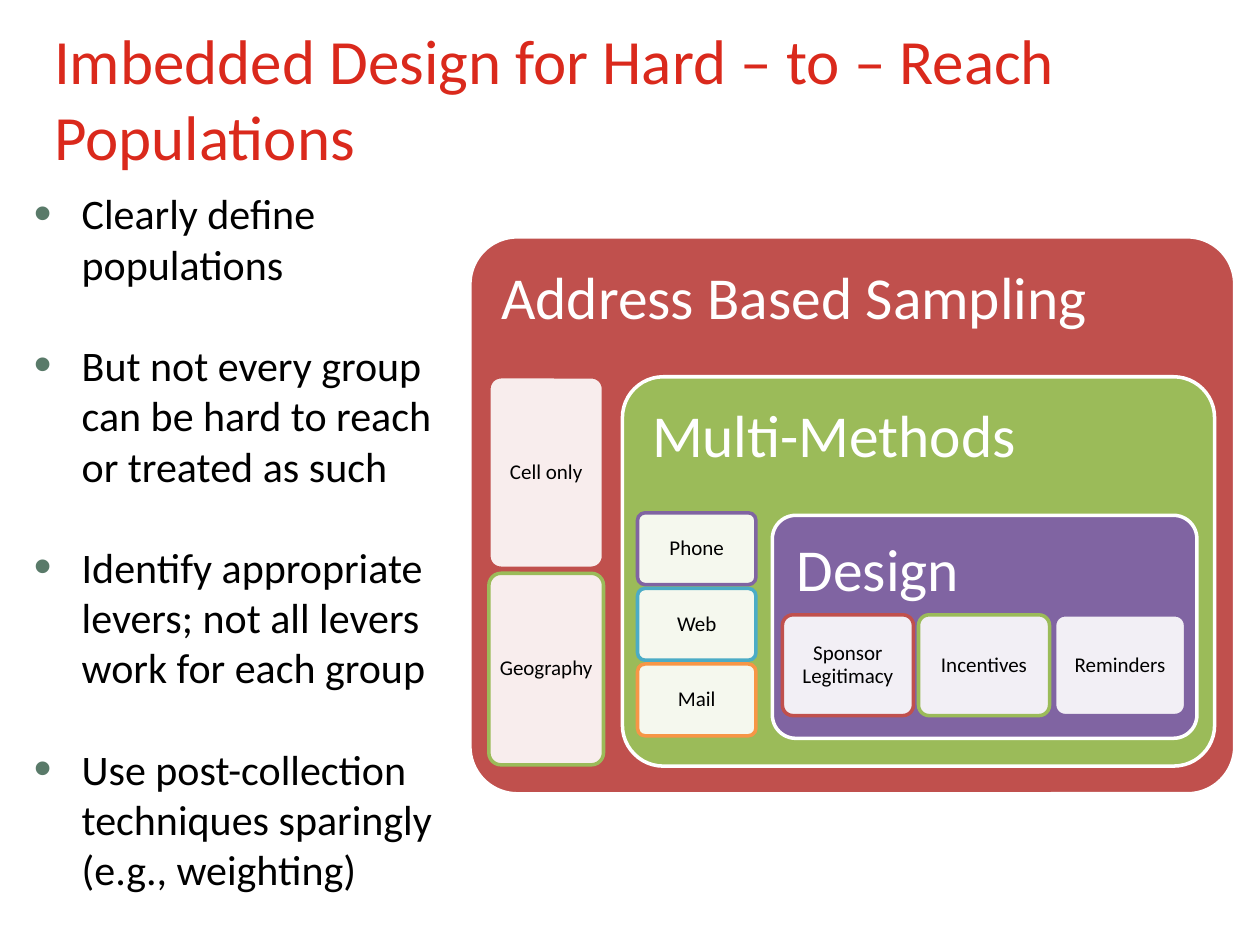
from lxml import etree
from pptx import Presentation
from pptx import util as u
from pptx.dml.color import RGBColor
from pptx.enum import shapes, text
from pptx.oxml.ns import qn

Inches = u.Inches
FONT = "Calibri"
RED, GREEN, PURPLE = "C0504D", "9BBB59", "8064A2"
TEAL, ORANGE = "4BACC6", "F79646"
WHITE, BLACK = "FFFFFF", "000000"

POINTS = [
    "Clearly define populations",
    "But not every group can be hard to reach or treated as such",
    "Identify appropriate levers; not all levers work for each group",
    "Use post-collection techniques sparingly (e.g., weighting)",
]


def rgb(value):
    return RGBColor.from_string(value)


def add_run(paragraph, words, size, color):
    run = paragraph.add_run()
    run.text = words
    run.font.name = FONT
    run.font.size = u.Pt(size)
    run.font.color.rgb = rgb(color)


def set_bullet(paragraph, color):
    props = paragraph._p.get_or_add_pPr()
    props.set("marL", str(Inches(0.38)))
    props.set("indent", str(-Inches(0.38)))
    bullet_color = etree.SubElement(props, qn("a:buClr"))
    etree.SubElement(bullet_color, qn("a:srgbClr"), val=color)
    etree.SubElement(props, qn("a:buSzPct"), val="120000")
    etree.SubElement(props, qn("a:buFont"), typeface="Arial")
    etree.SubElement(props, qn("a:buChar"), char="•")


def add_title(slide, left, top, width, height):
    title = slide.shapes.title
    title.left, title.top = Inches(left), Inches(top)
    title.width, title.height = Inches(width), Inches(height)
    frame = title.text_frame
    frame.auto_size = text.MSO_AUTO_SIZE.NONE
    frame.vertical_anchor = text.MSO_ANCHOR.MIDDLE
    heading = frame.paragraphs[0]
    heading.alignment = text.PP_ALIGN.LEFT
    add_run(heading, "Imbedded Design for Hard – to – Reach Populations", 36, "DA291C")


def add_points(slide, left, top, width, height):
    body = slide.shapes.add_textbox(*map(Inches, (left, top, width, height)))
    frame = body.text_frame
    frame.word_wrap = True
    for i, words in enumerate(POINTS):
        point = frame.add_paragraph() if i else frame.paragraphs[0]
        set_bullet(point, "597A69")
        if i:
            point.space_before = u.Pt(29)
        add_run(point, words, 24, BLACK)


def add_rounded(slide, box, radius, fill, line, margin):
    """Add a rounded rectangle; return it with its first paragraph."""
    rounded = slide.shapes.add_shape(
        shapes.MSO_SHAPE.ROUNDED_RECTANGLE, *map(Inches, box))
    rounded.adjustments[0] = radius
    rounded.shadow.inherit = False
    rounded.fill.solid()
    rounded.fill.fore_color.rgb = rgb(fill)
    rounded.line.color.rgb = rgb(line)
    rounded.line.width = u.Pt(2)
    frame = rounded.text_frame
    frame.word_wrap = True
    frame.margin_left = frame.margin_right = Inches(margin)
    frame.margin_top = frame.margin_bottom = Inches(margin)
    label = frame.paragraphs[0]
    label.line_spacing = 0.9
    return rounded, label


def add_panel(slide, box, name, fill, radius=0.105):
    panel, label = add_rounded(slide, box, radius, fill, WHITE, 0.14)
    panel.text_frame.vertical_anchor = text.MSO_ANCHOR.TOP
    label.alignment = text.PP_ALIGN.LEFT
    add_run(label, name, 34, WHITE)


def add_cards(slide, box, items, step_x=0, step_y=0):
    """Repeat cards from the first card's box, one step apart."""
    left, top, width, height = box
    for i, (name, line) in enumerate(items):
        place = (left + i * step_x, top + i * step_y, width, height)
        card, label = add_rounded(slide, place, 0.105, WHITE, line, 0.05)
        color = card.fill._xPr.find(qn("a:solidFill"))[0]
        etree.SubElement(color, qn("a:alpha"), val="90000")
        card.text_frame.vertical_anchor = text.MSO_ANCHOR.MIDDLE
        label.alignment = text.PP_ALIGN.CENTER
        add_run(label, name, 12, BLACK)


def add_nested_design(slide, left, top, width, height):
    add_panel(slide, (left, top, width, height), "Address Based Sampling", RED, 0.085)
    add_cards(slide, (left + 0.15, top + 1.11, 0.91, 1.52),
              [("Cell only", RED), ("Geography", GREEN)], step_y=1.56)

    add_panel(slide, (left + 1.21, top + 1.11, width - 1.37, height - 1.33),
              "Multi-Methods", GREEN)
    add_cards(slide, (left + 1.33, top + 2.19, 0.94, 0.57),
              [("Phone", PURPLE), ("Web", TEAL), ("Mail", ORANGE)], step_y=0.6)

    add_panel(slide, (left + 2.4, top + 2.21, width - 2.7, height - 2.65),
              "Design", PURPLE)
    add_cards(slide, (left + 2.48, top + 3, 1.04, 0.8),
              [("Sponsor Legitimacy", RED), ("Incentives", GREEN), ("Reminders", PURPLE)],
              step_x=1.08)


def main():
    deck = Presentation()
    deck.slide_width, deck.slide_height = Inches(10), Inches(7.5)
    slide = deck.slides.add_slide(deck.slide_layouts[5])
    add_title(slide, 0.33, 0.42, 9.33, 0.7)
    add_points(slide, 0.17, 1.44, 3.59, 6.05)
    add_nested_design(slide, 3.73, 1.88, 6.07, 4.42)
    deck.save("out.pptx")


if __name__ == "__main__":
    main()
